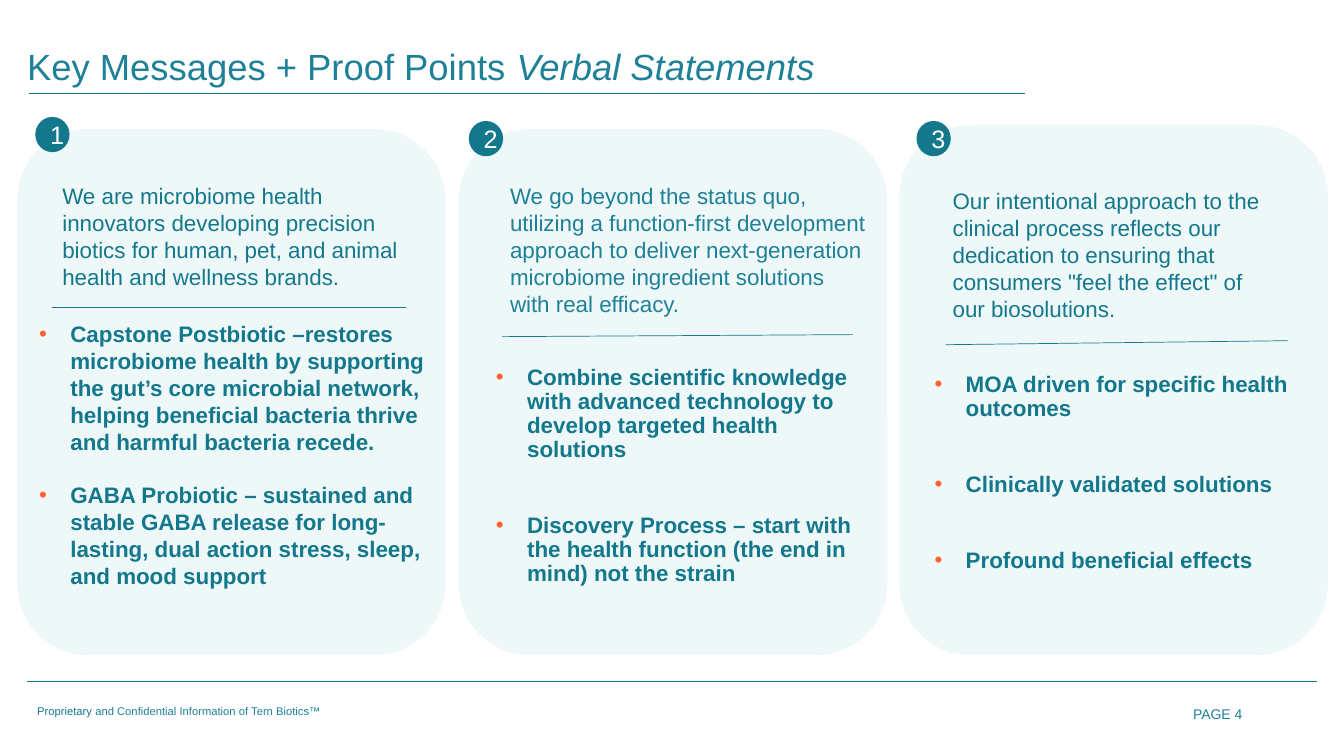
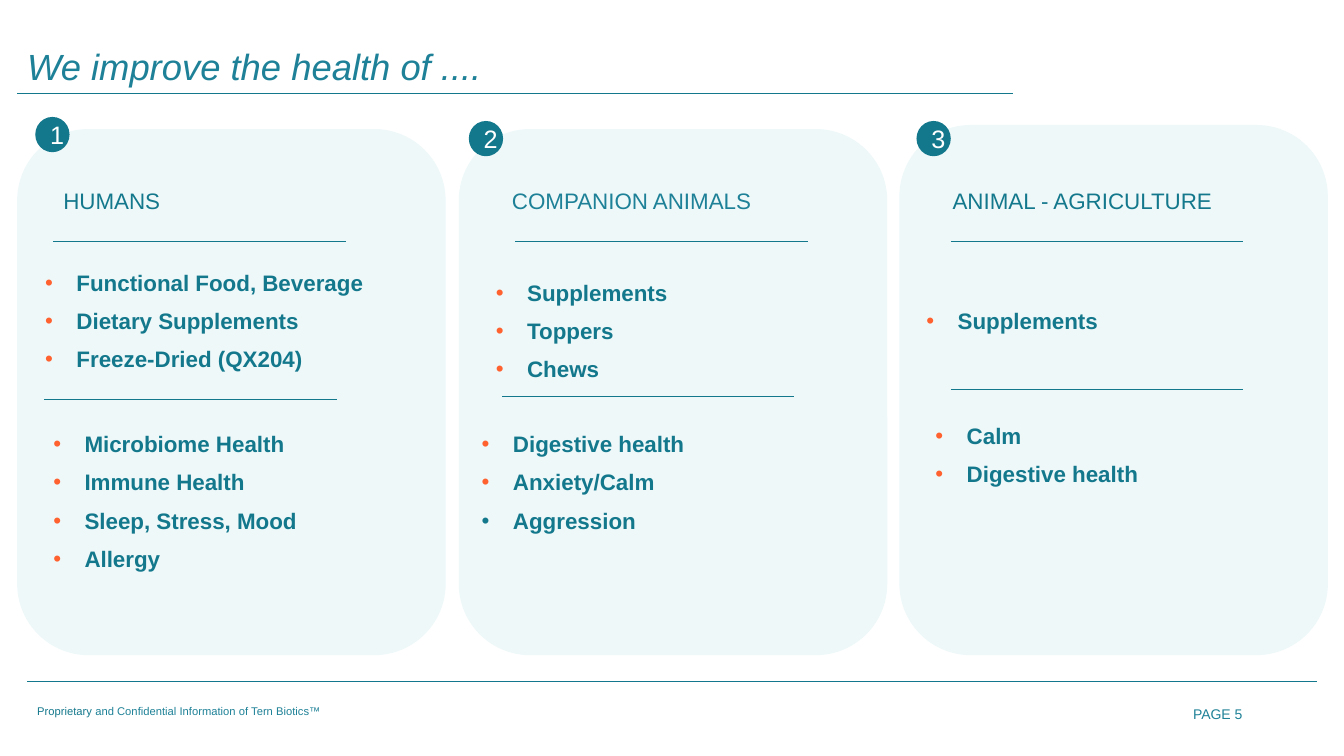
from lxml.etree import SubElement
from pptx import Presentation
from pptx.dml.color import RGBColor
from pptx.enum.shapes import MSO_CONNECTOR, MSO_SHAPE
from pptx.enum.text import MSO_ANCHOR, PP_ALIGN
from pptx.oxml.ns import qn
from pptx.util import Pt

COLORS = {
    "teal": "14788C",
    "sea": "1E8197",
    "mist": "EEF8F9",
    "orange": "FF612F",
    "white": "FFFFFF",
}
FORMATS = {
    "title": {"size": Pt(26)},
    "title_italic": {"size": Pt(26), "italic": True},
    "intro": {"size": Pt(16)},
    "bullet": {"size": Pt(16), "bold": True},
    "badge": {"size": Pt(18)},
    "footer": {"size": Pt(8)},
    "page": {"size": Pt(10)},
}
CARDS = [(17, 128, 522), (455, 128, 522), (892, 124, 526)]
BADGES = [(35, 116), (465, 120), (909, 120)]


def px(n):
    """Turn px (100 to the inch) into EMU."""
    return n * 9144


def rgb(name):
    """Look up a named colour."""
    return RGBColor.from_string(COLORS[name])


class Deck:
    """Holds the shared style and the current slide."""

    def __init__(self):
        """Start an empty widescreen presentation."""
        self.prs = Presentation()
        self.prs.slide_width, self.prs.slide_height = px(1333), px(750)
        self.s = None

    def run(self, p, text, fmt, color):
        """Add one formatted run."""
        r = p.add_run()
        r.text = text
        r.font.name = "Arial"
        r.font.color.rgb = rgb(color)
        for name, value in FORMATS[fmt].items():
            setattr(r.font, name, value)

    def box(self, x, y, w, h):
        """Add a wrapping text box and return its frame."""
        tf = self.s.shapes.add_textbox(px(x), px(y), px(w), px(h)).text_frame
        tf.word_wrap = True
        return tf

    def text(self, x, y, w, h, runs, align=PP_ALIGN.LEFT):
        """Add a one-paragraph text box and return its frame."""
        tf = self.box(x, y, w, h)
        p = tf.paragraphs[0]
        p.alignment = align
        for run in runs:
            self.run(p, *run)
        return tf

    def bullets(self, x, y, w, h, items, gap=10, spacing=0.9, last="orange"):
        """Add a bold bulleted list."""
        tf = self.box(x, y, w, h)
        for i, item in enumerate(items):
            p = tf.paragraphs[0] if i == 0 else tf.add_paragraph()
            pPr = p._p.get_or_add_pPr()
            pPr.set("marL", str(px(31)))
            pPr.set("indent", str(-px(31)))
            marker = last if i == len(items) - 1 else "orange"
            clr = SubElement(pPr, qn("a:buClr"))
            SubElement(clr, qn("a:srgbClr"), val=COLORS[marker])
            SubElement(pPr, qn("a:buFont"), typeface="Arial")
            SubElement(pPr, qn("a:buChar"), char="•")
            p.line_spacing = spacing
            if i:
                p.space_before = Pt(gap)
            self.run(p, item, "bullet", "teal")

    def line(self, x1, y1, x2, y2, width=0.5):
        """Add a thin teal rule."""
        c = self.s.shapes.add_connector(
            MSO_CONNECTOR.STRAIGHT, px(x1), px(y1), px(x2), px(y2))
        c.line.color.rgb = rgb("teal")
        c.line.width = Pt(width)
        SubElement(c._element.spPr, qn("a:effectLst"))

    def shape(self, kind, x, y, w, h, fill):
        """Add a flat filled shape without outline."""
        sp = self.s.shapes.add_shape(kind, px(x), px(y), px(w), px(h))
        sp.shadow.inherit = False
        sp.fill.solid()
        sp.fill.fore_color.rgb = rgb(fill)
        sp.line.fill.background()
        return sp

    def badge(self, x, y, label):
        """Add a numbered circle."""
        sp = self.shape(MSO_SHAPE.OVAL, x, y, 34, 35, "teal")
        tf = sp.text_frame
        tf.vertical_anchor = MSO_ANCHOR.MIDDLE
        p = tf.paragraphs[0]
        p.alignment = PP_ALIGN.CENTER
        self.run(p, label, "badge", "white")

    def slide(self, page, title, rule_x):
        """Start a slide with footer, title, cards and badges."""
        self.s = self.prs.slides.add_slide(self.prs.slide_layouts[6])
        self.line(27, 676, 1306, 676, 0.75)
        self.text(27, 694, 1100, 34, [
            ("Proprietary", "footer", "teal"),
            (" and Confidential Information of Tern Biotics™", "footer", "sea"),
        ])
        self.text(1154, 695, 88, 40, [(f"PAGE {page}", "page", "sea")], PP_ALIGN.RIGHT)
        for x, y, h in CARDS:
            self.shape(MSO_SHAPE.ROUNDED_RECTANGLE, x, y, 425, h, "mist")
        tf = self.text(17, 38, 1046, 55, title)
        tf.vertical_anchor = MSO_ANCHOR.BOTTOM
        tf.paragraphs[0].line_spacing = 0.9
        self.line(rule_x, 93, rule_x + 988, 93)
        for i, (x, y) in enumerate(BADGES, 1):
            self.badge(x, y, str(i))


def key_messages(deck):
    """Build the key messages slide."""
    deck.slide(4, [
        ("Key Messages + Proof Points ", "title", "sea"),
        ("Verbal Statements", "title_italic", "sea"),
    ], 29)
    intros = [
        (52, 176, 374, "teal", "We are microbiome health innovators developing precision "
         "biotics for human, pet, and animal health and wellness brands."),
        (496, 176, 375, "sea", "We go beyond the status quo, utilizing a function-first "
         "development approach to deliver next-generation microbiome ingredient "
         "solutions with real efficacy."),
        (935, 181, 340, "teal", "Our intentional approach to the clinical process reflects "
         "our dedication to ensuring that consumers \"feel the effect\" of our biosolutions."),
    ]
    for x, y, w, color, words in intros:
        deck.text(x, y, w, 145, [(words, "intro", color)])
    for rule in [(52, 305, 403, 305), (498, 334, 846, 332), (938, 342, 1277, 338)]:
        deck.line(*rule)
    deck.bullets(29, 313, 403, 280, [
        "Capstone Postbiotic –restores microbiome health by supporting the gut’s core "
        "microbial network, helping beneficial bacteria thrive and harmful bacteria recede.",
        "GABA Probiotic – sustained and stable GABA release for long-lasting, dual action "
        "stress, sleep, and mood support",
    ], 19, 1.0)
    deck.bullets(482, 358, 383, 235, [
        "Combine scientific knowledge with advanced technology to develop targeted "
        "health solutions",
        "Discovery Process – start with the health function (the end in mind) not the strain",
    ], 37)
    deck.bullets(917, 365, 375, 220, [
        "MOA driven for specific health outcomes",
        "Clinically validated solutions",
        "Profound beneficial effects",
    ], 37)


def audiences(deck):
    """Build the slide of audiences, formats and benefits."""
    deck.slide(5, [("We improve the health of ....", "title_italic", "sea")], 17)
    headings = [
        (53, "HUMANS", "teal"),
        (498, "COMPANION ANIMALS", "sea"),
        (935, "ANIMAL - AGRICULTURE", "teal"),
    ]
    for x, words, color in headings:
        deck.text(x, 181, 340, 37, [(words, "intro", color)])
    for x, y in [(53, 239), (511, 239), (943, 239), (44, 396), (498, 393), (943, 386)]:
        deck.line(x, y, x + 290, y)
    lists = [
        (35, 265, ["Functional Food, Beverage", "Dietary Supplements", "Freeze-Dried (QX204)"]),
        (482, 275, ["Supplements", "Toppers", "Chews"]),
        (909, 303, ["Supplements"]),
        (43, 425, ["Microbiome Health", "Immune Health", "Sleep, Stress, Mood", "Allergy"]),
        (918, 417, ["Calm", "Digestive health"]),
    ]
    for x, y, items in lists:
        deck.bullets(x, y, 375, 10 + 38 * len(items), items)
    deck.bullets(468, 425, 374, 124, ["Digestive health", "Anxiety/Calm", "Aggression"],
                 last="teal")


def main():
    """Build and save the deck."""
    deck = Deck()
    key_messages(deck)
    audiences(deck)
    deck.prs.save("out.pptx")


if __name__ == "__main__":
    main()
